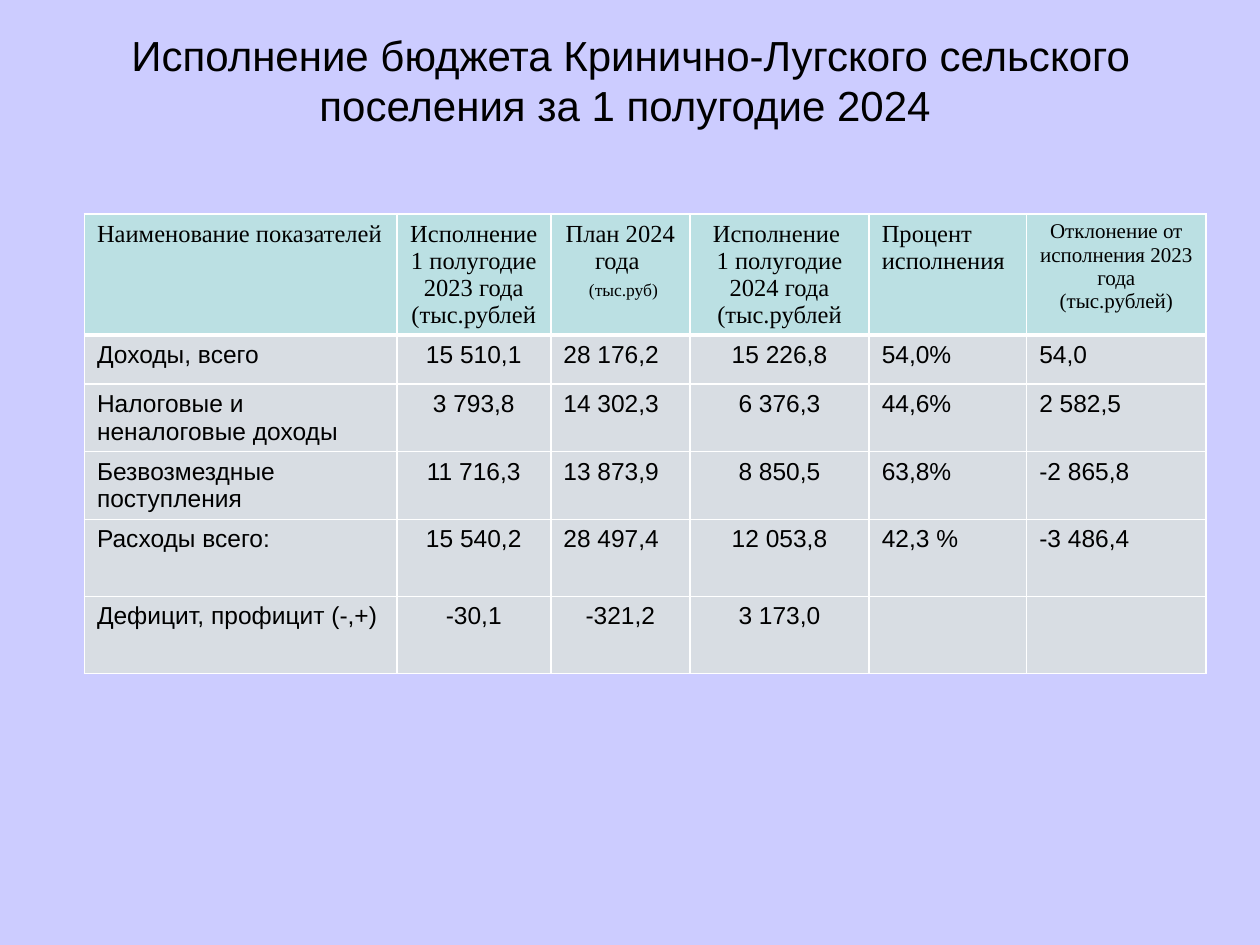
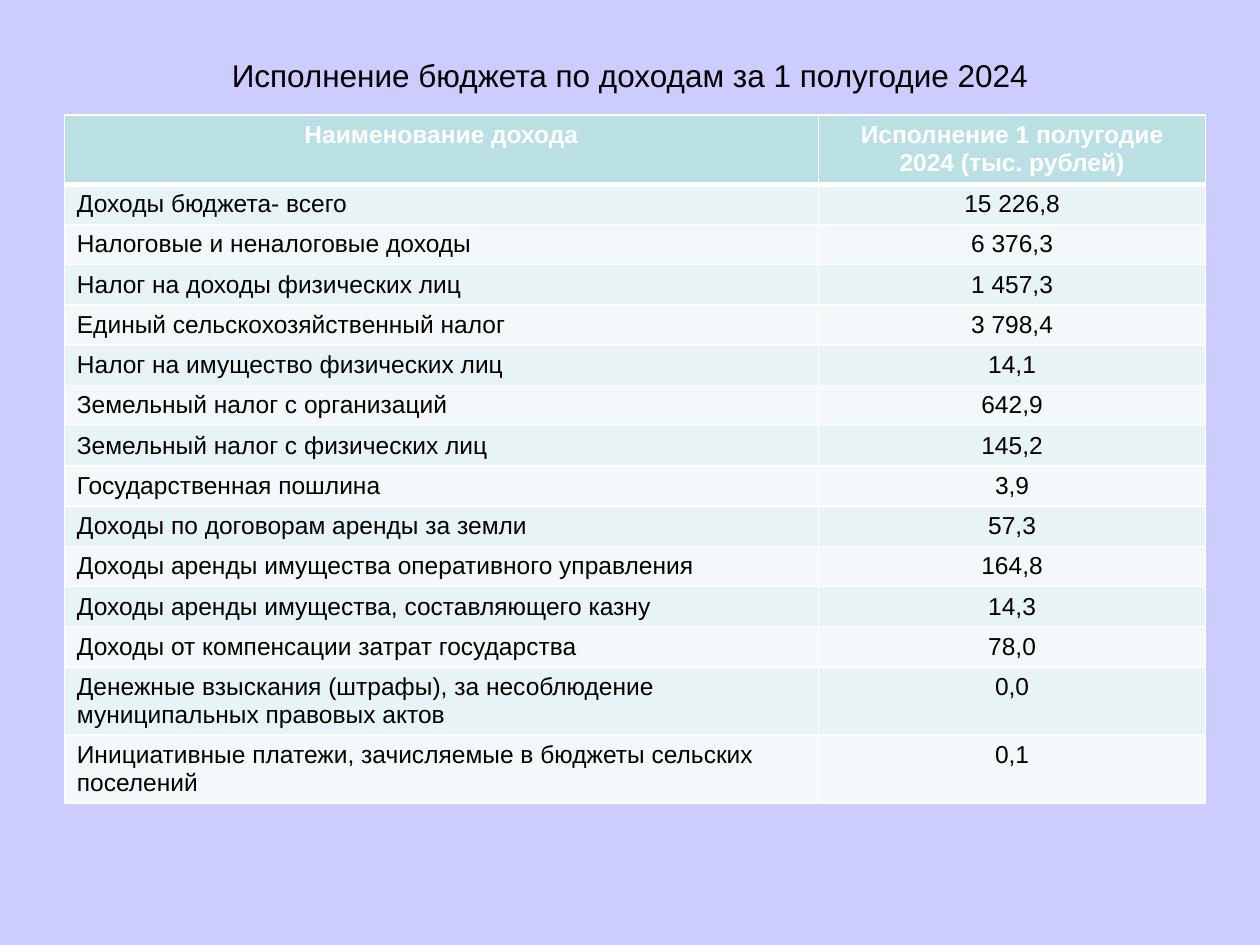
"""Build two slides on how the settlement's budget was carried out in the first half of 2024."""
from dataclasses import dataclass

from lxml import etree
from pptx import Presentation
from pptx import util as u
from pptx.dml.color import RGBColor
from pptx.enum import text
from pptx.oxml import ns


@dataclass(frozen=True)
class Theme:
    page: str = "CCCCFF"
    header: str = "BBE0E3"
    plain: str = "D8DDE3"
    bands: tuple = ("E7F3F4", "F3F9FA")
    ink: str = "000000"
    white: str = "FFFFFF"
    sans: str = "Arial"
    serif: str = "Times New Roman"
    title: int = 24
    subtitle: int = 18
    body: int = 14
    small: int = 12
    unit: int = 10
    rule: int = 1
    header_rule: int = 3


THEME = Theme()
ALIGN = {"l": text.PP_ALIGN.LEFT, "c": text.PP_ALIGN.CENTER}


def style_para(para, align, size, color=THEME.ink, face=THEME.sans, bold=False):
    para.alignment = ALIGN[align]
    para.font.size = u.Pt(size)
    para.font.name = face
    para.font.bold = bold
    para.font.color.rgb = RGBColor.from_string(color)


def style_cell(cell, fill, top, bottom):
    properties = cell._tc.get_or_add_tcPr()
    for side, width in (("L", THEME.rule), ("R", THEME.rule), ("T", top), ("B", bottom)):
        line = etree.SubElement(properties, ns.qn(f"a:ln{side}"), w=str(u.Pt(width)))
        solid = etree.SubElement(line, ns.qn("a:solidFill"))
        etree.SubElement(solid, ns.qn("a:srgbClr"), val=THEME.white)
    cell.fill.solid()
    cell.fill.fore_color.rgb = RGBColor.from_string(fill)


budget = [
    ("Наименование показателей", "Исполнение \n1 полугодие 2023 года\n(тыс.рублей",
     "План 2024 года \n ", "Исполнение \n1 полугодие 2024 года\n(тыс.рублей",
     "Процент исполнения", "Отклонение от исполнения 2023 года (тыс.рублей)"),
    ("Доходы, всего", "15 510,1", "28 176,2", "15 226,8", "54,0%", "54,0"),
    ("Налоговые и неналоговые доходы", "3 793,8", "14 302,3", "6 376,3", "44,6%", "2 582,5"),
    ("Безвозмездные поступления", "11 716,3", "13 873,9", "8 850,5", "63,8%", "-2 865,8"),
    ("Расходы всего:", "15 540,2", "28 497,4", "12 053,8", "42,3 %", "-3 486,4"),
    ("Дефицит, профицит (-,+)", "-30,1", "-321,2", "3 173,0", "", ""),
]
income = [
    ("Наименование дохода", "Исполнение 1 полугодие 2024 (тыс. рублей)"),
    ("Доходы бюджета- всего", "15 226,8"),
    ("Налоговые и неналоговые доходы", "6 376,3"),
    ("Налог на доходы физических лиц", "1 457,3"),
    ("Единый сельскохозяйственный налог", "3 798,4"),
    ("Налог на имущество физических лиц", "14,1"),
    ("Земельный налог с организаций", "642,9"),
    ("Земельный налог с физических лиц", "145,2"),
    ("Государственная пошлина", "3,9"),
    ("Доходы по договорам аренды за земли", "57,3"),
    ("Доходы аренды имущества оперативного управления", "164,8"),
    ("Доходы аренды имущества, составляющего казну", "14,3"),
    ("Доходы от компенсации затрат государства", "78,0"),
    ("Денежные взыскания (штрафы), за несоблюдение муниципальных правовых актов", "0,0"),
    ("Инициативные платежи, зачисляемые в бюджеты сельских поселений", "0,1"),
]
pages = [
    dict(title="Исполнение бюджета Кринично-Лугского сельского поселения за 1 полугодие 2024 ",
         title_box=(36.5, 20, 648, 51), title_size=THEME.title,
         rows=budget, origin=(48.25, 122.25),
         widths=(178.5, 88, 79.5, 102.5, 90, 102.5), heights=(69, 28, 38.5, 38.5, 44, 44),
         aligns=["lccclc"] + ["lclcll"] * 4 + ["lcccll"], fills=(THEME.plain,),
         header=dict(color=THEME.ink, face=THEME.serif, bold=False)),
    dict(title="Исполнение бюджета по доходам за 1 полугодие 2024",
         title_box=(36, 26, 648, 34), title_size=THEME.subtitle,
         rows=income, origin=(36.75, 65.75),
         widths=(431, 221.25), heights=(39.5, *[23] * 12, 39, 39),
         aligns=["cc"] + ["lc"] * 14, fills=THEME.bands,
         header=dict(color=THEME.white, face=THEME.sans, bold=True)),
]

deck = Presentation()
deck.slide_width, deck.slide_height = u.Pt(720), u.Pt(540)
deck.slide_master.background.fill.solid()
deck.slide_master.background.fill.fore_color.rgb = RGBColor.from_string(THEME.page)

tables = []
for content in pages:
    page = deck.slides.add_slide(deck.slide_layouts[5])
    title = page.shapes.title
    title.left, title.top, title.width, title.height = map(u.Pt, content["title_box"])
    title.text_frame.text = content["title"]
    title.text_frame.auto_size = text.MSO_AUTO_SIZE.NONE
    title.text_frame.vertical_anchor = text.MSO_ANCHOR.MIDDLE
    style_para(title.text_frame.paragraphs[0], "c", content["title_size"])

    rows, widths, heights = content["rows"], content["widths"], content["heights"]
    frame = page.shapes.add_table(len(rows), len(widths), *map(u.Pt, content["origin"]),
                                  u.Pt(sum(widths)), u.Pt(sum(heights)))
    table = frame.table
    tables.append(table)
    table.first_row = content["header"]["bold"]
    table.horz_banding = False
    for column, width in zip(table.columns, widths):
        column.width = u.Pt(width)
    for row_index, (values, height) in enumerate(zip(rows, heights)):
        table.rows[row_index].height = u.Pt(height)
        is_header = row_index == 0
        fills = content["fills"]
        fill = THEME.header if is_header else fills[(row_index - 1) % len(fills)]
        top = THEME.header_rule if row_index == 1 else THEME.rule
        bottom = THEME.header_rule if is_header else THEME.rule
        look = content["header"] if is_header else {}
        for column_index, value in enumerate(values):
            cell = table.cell(row_index, column_index)
            style_cell(cell, fill, top, bottom)
            if not value:
                continue
            cell.text_frame.text = value
            size = THEME.small if value.startswith("Отклонение") else THEME.body
            for para in cell.text_frame.paragraphs:
                style_para(para, content["aligns"][row_index][column_index], size, **look)

unit = tables[0].cell(0, 2).text_frame.paragraphs[1].add_run()
unit.text = "(тыс.руб)"
unit.font.size = u.Pt(THEME.unit)

deck.save("out.pptx")
